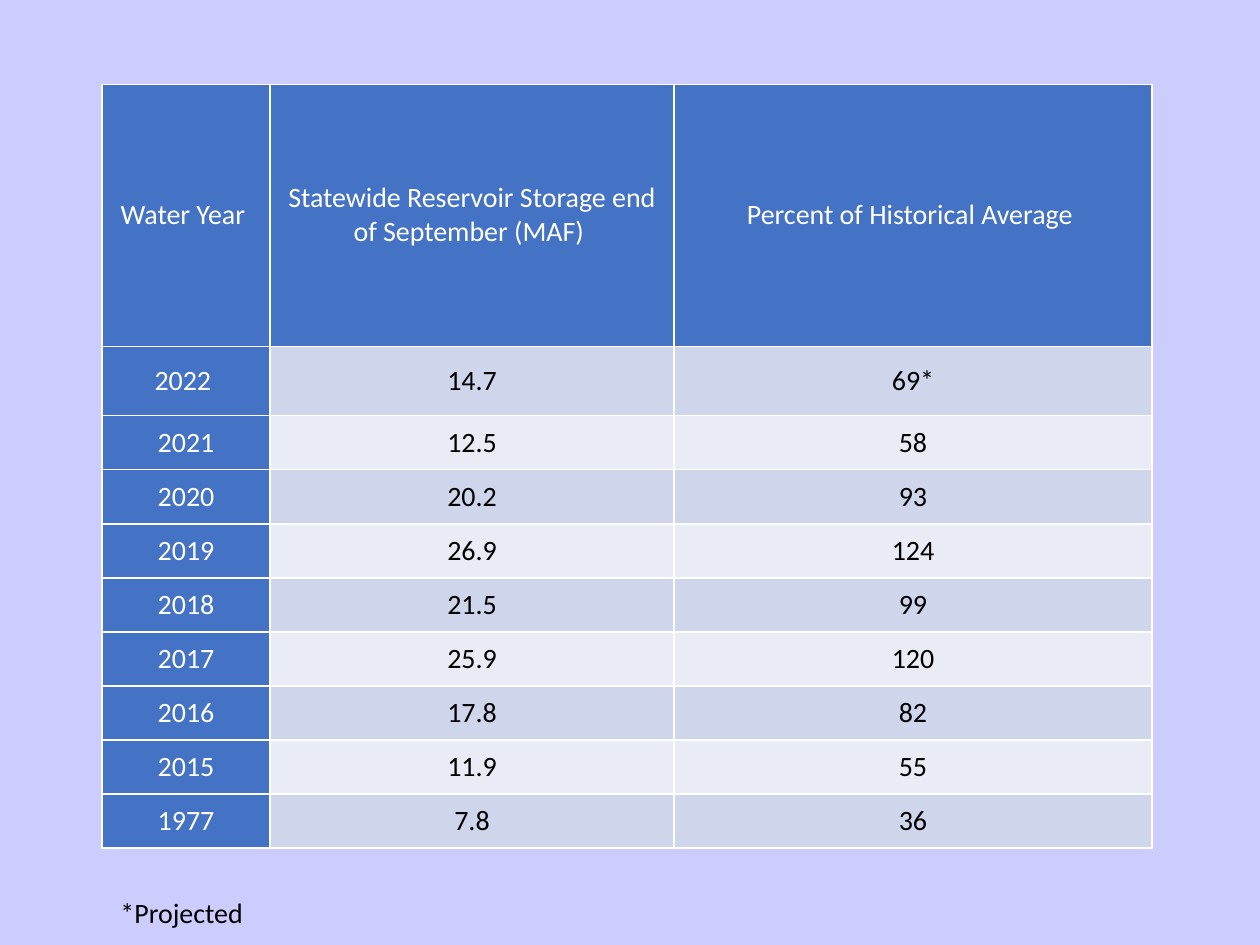
from dataclasses import dataclass

from lxml import etree
from pptx import Presentation
from pptx.dml.color import RGBColor
from pptx.enum import text
from pptx.oxml import ns
from pptx.util import Cm, Pt


@dataclass(frozen=True)
class Theme:
    font: str = "Calibri"
    size: int = 16
    page: str = "CCCCFF"
    heading: str = "4472C4"
    bands: tuple = ("CFD5EA", "E9EBF5")
    light: str = "FFFFFF"
    dark: str = "000000"
    border: int = 1


theme = Theme()


def style_paragraph(para, color):
    para.font.name = theme.font
    para.font.size = Pt(theme.size)
    para.font.bold = False
    para.font.color.rgb = RGBColor.from_string(color)


def add_borders(cell):
    properties = cell._tc.get_or_add_tcPr()
    for position, side in enumerate(("lnL", "lnR", "lnT", "lnB")):
        line = etree.Element(ns.qn(f"a:{side}"), w=str(Pt(theme.border)))
        fill = etree.SubElement(line, ns.qn("a:solidFill"))
        etree.SubElement(fill, ns.qn("a:srgbClr"), val=theme.light)
        properties.insert(position, line)  # borders come before the fill


# Some labels end in a no-break space
records = [
    ("Water Year ", "Statewide Reservoir Storage end of September (MAF) ",
     "Percent of Historical Average "),
    ("2022 ", "14.7", "69*"),
    ("2021", "12.5", "58"),
    ("2020", "20.2", "93"),
    ("2019", "26.9", "124"),
    ("2018", "21.5", "99"),
    ("2017", "25.9", "120"),
    ("2016", "17.8", "82"),
    ("2015", "11.9", "55"),
    ("1977", "7.8", "36"),
]
widths = [3.38, 8.15, 9.63]
heights = [5.28, 1.4] + [1.09] * (len(records) - 2)

# Page
deck = Presentation()
deck.slide_width, deck.slide_height = Cm(25.4), Cm(19.05)
page = deck.slides.add_slide(deck.slide_layouts[6])
page.background.fill.solid()
page.background.fill.fore_color.rgb = RGBColor.from_string(theme.page)

# Reservoir table
table = page.shapes.add_table(
    len(records), len(widths), Cm(2.06), Cm(1.7),
    Cm(sum(widths)), Cm(sum(heights))).table
table.first_col = True
for column, width in zip(table.columns, widths):
    column.width = Cm(width)
for row, height in zip(table.rows, heights):
    row.height = Cm(height)

for r, record in enumerate(records):
    for c, value in enumerate(record):
        is_heading = r == 0 or c == 0
        cell = table.cell(r, c)
        cell.text = value
        cell.vertical_anchor = text.MSO_ANCHOR.MIDDLE
        cell.margin_left = cell.margin_right = Cm(0.18)
        cell.margin_top = cell.margin_bottom = 0
        cell.fill.solid()
        cell.fill.fore_color.rgb = RGBColor.from_string(
            theme.heading if is_heading else theme.bands[(r - 1) % 2])
        add_borders(cell)
        para = cell.text_frame.paragraphs[0]
        para.alignment = text.PP_ALIGN.CENTER
        style_paragraph(para, theme.light if is_heading else theme.dark)

# Footnote
box = page.shapes.add_textbox(Cm(2.18), Cm(17.93), Cm(19.91), Cm(0.94))
box.text_frame.word_wrap = True
box.text_frame.auto_size = text.MSO_AUTO_SIZE.SHAPE_TO_FIT_TEXT
box.text_frame.text = "*Projected"
style_paragraph(box.text_frame.paragraphs[0], theme.dark)

deck.save("out.pptx")
